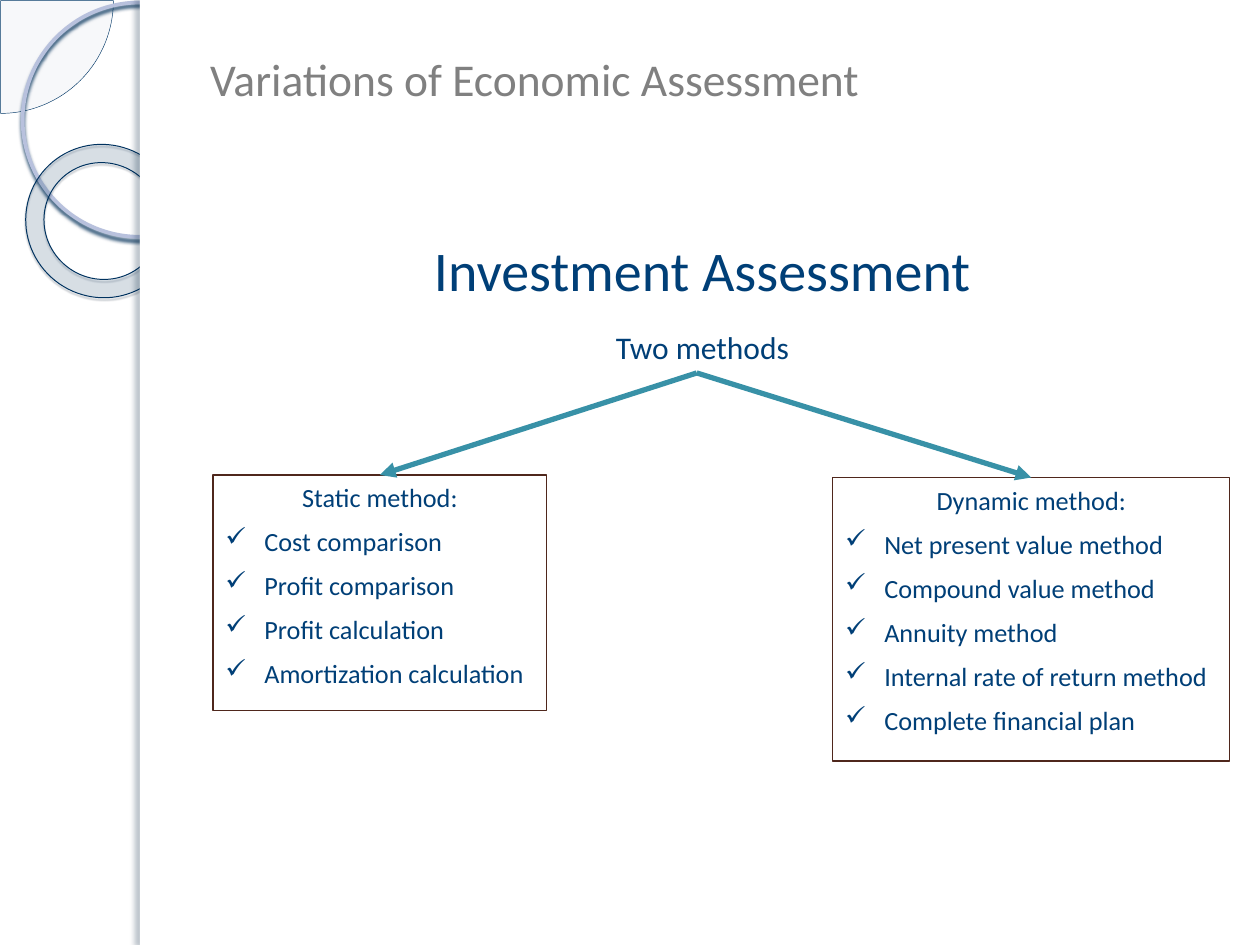
from lxml.etree import SubElement
from pptx import Presentation
from pptx.dml.color import RGBColor as RGB
from pptx.enum.shapes import MSO_CONNECTOR as LINK, MSO_SHAPE as SHAPE
from pptx.enum.text import MSO_ANCHOR as ANCHOR, PP_ALIGN as ALIGN
from pptx.oxml.ns import qn
from pptx.util import Inches, Pt

NAVY = RGB(0x00, 0x3F, 0x77)
GRAY = RGB(0x80, 0x80, 0x80)
BROWN = RGB(0x4F, 0x27, 0x1C)
TEAL = RGB(0x38, 0x91, 0xA7)
WHITE = RGB(0xFF, 0xFF, 0xFF)
PALE = RGB(0xE8, 0xEA, 0xF0)
LILAC = RGB(0xB8, 0xC1, 0xDD)
EDGE = RGB(0x00, 0x36, 0x66)
RIM = RGB(0x00, 0x32, 0x5F)
BLUE = RGB(0x00, 0x38, 0x69)

TITLE = "Variations of Economic Assessment"
HEADS = [("Investment Assessment", 32), ("Two methods", 18)]
FORK = (5.53, 2.96)
BOXES = [
    ((1.69, 3.77, 2.65, 1.87), "Static method:",
     ["Cost comparison", "Profit comparison", "Profit calculation",
      "Amortization calculation"]),
    ((6.61, 3.79, 3.15, 2.25), "Dynamic method:",
     ["Net present value method", "Compound value method", "Annuity method",
      "Internal rate of return method", "Complete financial plan"]),
]

deck = Presentation()
deck.slide_width, deck.slide_height = Inches(10), Inches(7.5)
slide = deck.slides.add_slide(deck.slide_layouts[6])
shapes = slide.shapes


def fade(node, pct):
    SubElement(node, qn("a:alpha"), val=str(pct * 1000))


def add_shape(kind, at, fill=None, alpha=None, line=None, width=0.75, shade=None):
    shape = shapes.add_shape(kind, *map(Inches, at))
    shape.shadow.inherit = False
    if fill is None:
        shape.fill.background()
    else:
        shape.fill.solid()
        shape.fill.fore_color.rgb = fill
        if alpha:
            fade(shape.fill._xPr.find(".//" + qn("a:srgbClr")), alpha)
    if line is None:
        shape.line.fill.background()
    else:
        shape.line.color.rgb = line
        shape.line.width = Pt(width)
    if shade:
        color, pct, blur, dist, turn = shade
        glow = SubElement(shape._element.spPr.find(qn("a:effectLst")), qn("a:outerShdw"),
                          blurRad=str(Pt(blur)), dist=str(Pt(dist)),
                          dir=str(turn * 60000), rotWithShape="0")
        fade(SubElement(glow, qn("a:srgbClr"), val=color), pct)
    return shape


def add_text(para, text, size, color=NAVY, align=ALIGN.CENTER):
    para.alignment = align
    run = para.add_run()
    run.text = text
    run.font.name, run.font.size, run.font.color.rgb = "Calibri", Pt(size), color


def next_para(frame, gap):
    para = frame.add_paragraph()
    para.space_before = Pt(gap)
    return para


def add_frame(at, anchor):
    frame = shapes.add_textbox(*map(Inches, at)).text_frame
    frame.word_wrap, frame.vertical_anchor = True, anchor
    return frame


def add_arrow(start, end):
    arrow = shapes.add_connector(LINK.STRAIGHT, *map(Inches, start + end))
    arrow.line.color.rgb, arrow.line.width = TEAL, Pt(3)
    SubElement(arrow.line._get_or_add_ln(), qn("a:tailEnd"), type="triangle")
    SubElement(arrow._element.spPr, qn("a:effectLst"))


def add_box(at, head, items):
    box = add_shape(SHAPE.RECTANGLE, at, line=BROWN)
    frame = box.text_frame
    frame.word_wrap, frame.vertical_anchor = True, ANCHOR.TOP
    add_text(frame.paragraphs[0], head, 15)
    for item in items:
        para = next_para(frame, 7.2)
        props = para._p.get_or_add_pPr()
        props.set("marL", str(Inches(0.31)))
        props.set("indent", str(-Inches(0.31)))
        SubElement(props, qn("a:buChar"), char="✓")
        add_text(para, item, 15, align=ALIGN.JUSTIFY)


pie = add_shape(SHAPE.PIE, (-0.89, -0.89, 1.79, 1.79), PALE, 33, EDGE, 0.25)
pie.adjustments[0], pie.adjustments[1] = 0, 54
add_shape(SHAPE.OVAL, (0.18, 0.02, 1.86, 1.86), line=LILAC, width=2.15,
          shade=("002F58", 85, 2, 2, 90))
ring = add_shape(SHAPE.DONUT, (0.2, 1.15, 1.23, 1.21), BLUE, 12, RIM, 0.58,
                 ("00172C", 35, 1, 1.2, 75))
ring.adjustments[0], ring.rotation = 0.12, 38.6
add_shape(SHAPE.RECTANGLE, (1.11, 0, 8.89, 7.5), WHITE)
add_shape(SHAPE.RECTANGLE, (1.11, 0, 0.08, 7.5), WHITE,
          shade=("001F3B", 25, 3, 3, 180))

title = add_frame((1.57, 0, 8.2, 1.25), ANCHOR.MIDDLE)
add_text(title.paragraphs[0], TITLE, 26, GRAY, ALIGN.JUSTIFY)

intro = add_frame((1.18, 1.94, 8.7, 1.02), ANCHOR.TOP)
for i, (text, size) in enumerate(HEADS):
    para = next_para(intro, 6) if i else intro.paragraphs[0]
    para.line_spacing = Pt(30)
    para._p.get_or_add_pPr().set("marL", str(Inches(0.09)))
    add_text(para, text, size)

for at, head, items in BOXES:
    add_box(at, head, items)
for (left, top, width, height), head, items in BOXES:
    add_arrow(FORK, (left + width / 2, top))

deck.save("out.pptx")
